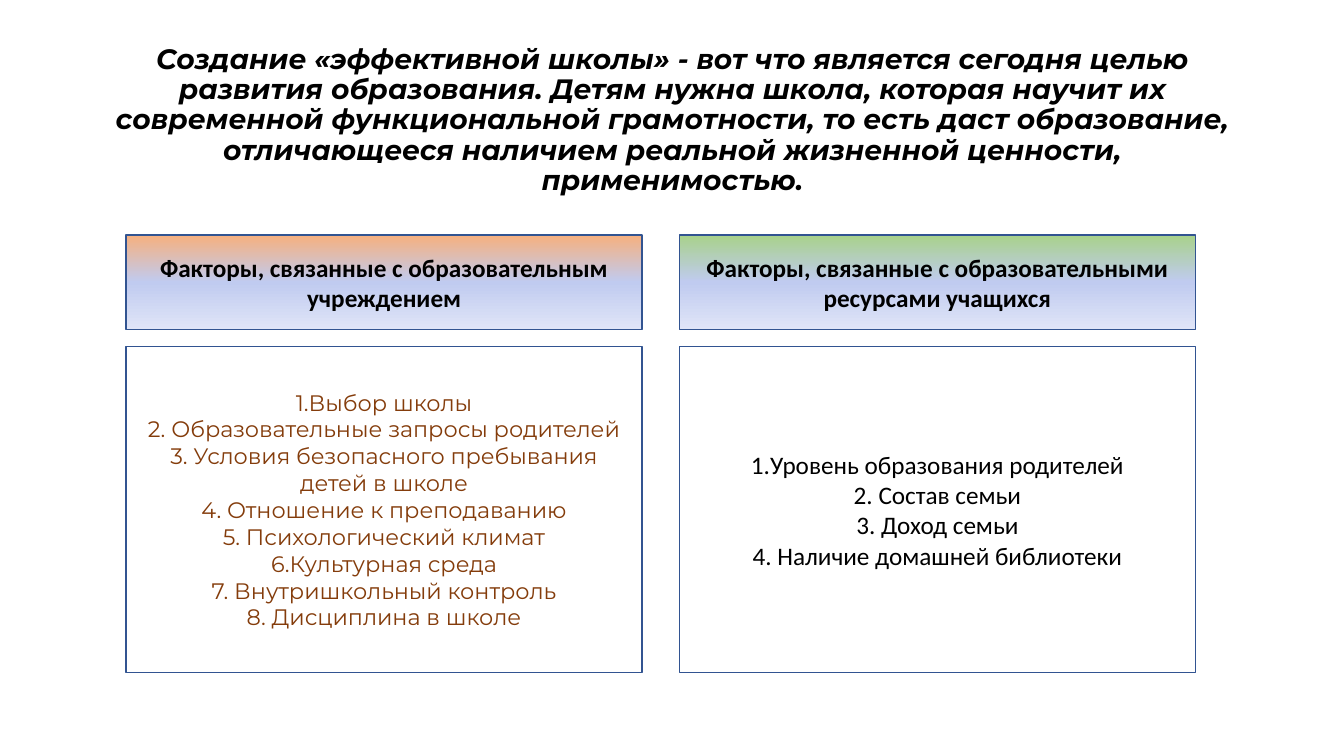
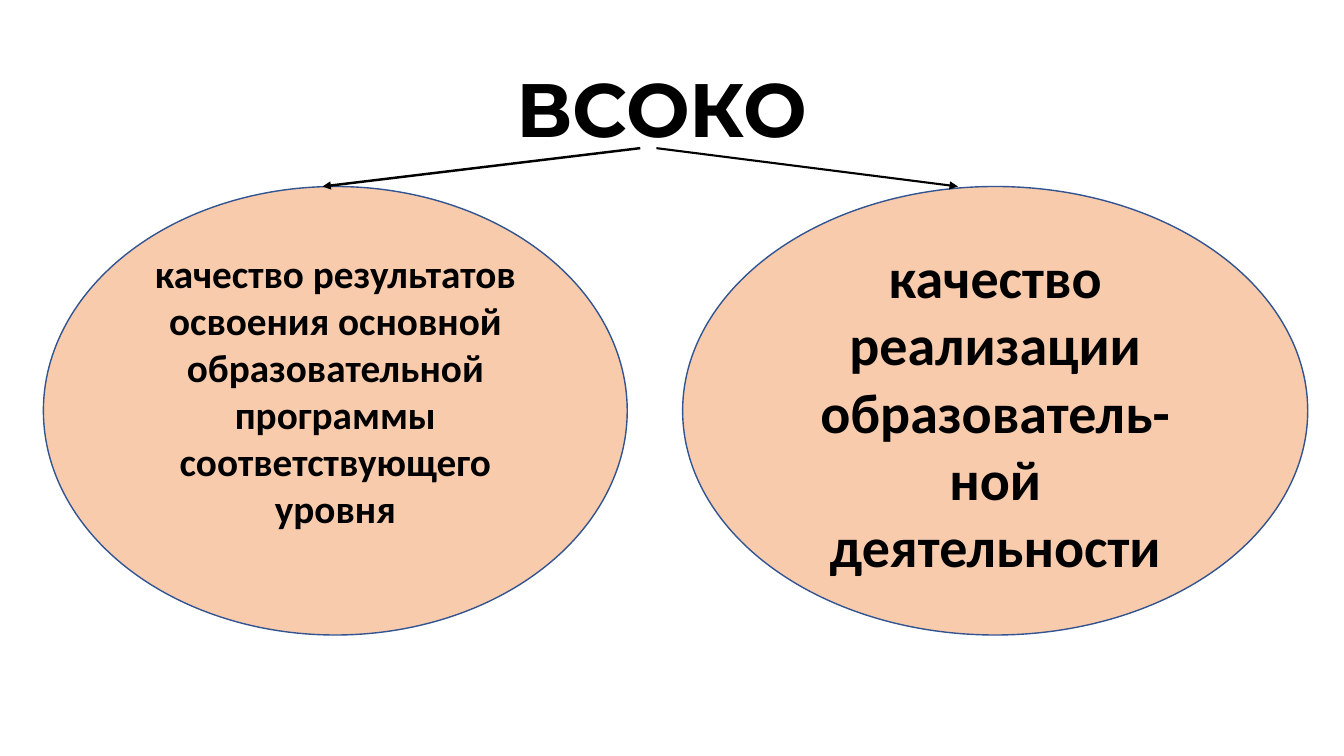
from copy import deepcopy

from lxml import etree
from pptx import Presentation
from pptx.dml.color import RGBColor
from pptx.enum.shapes import MSO_CONNECTOR, MSO_SHAPE
from pptx.enum.text import MSO_ANCHOR, PP_ALIGN
from pptx.oxml.ns import qn
from pptx.util import Inches, Pt

RECT, OVAL = MSO_SHAPE.RECTANGLE, MSO_SHAPE.OVAL
LINE = MSO_CONNECTOR.STRAIGHT
TOP, MIDDLE = MSO_ANCHOR.TOP, MSO_ANCHOR.MIDDLE
CENTER = PP_ALIGN.CENTER

WIDE, HIGH = Inches(13.33), Inches(7.5)
HEAD, BODY = "Montserrat", "Calibri"
COLORS = {
    "text": "000000", "brown": "843C0B", "edge": "325491",
    "peach": "F8CBAD", "orange": "F4B183", "green": "A9D18E",
    "blue": "C0CBF0", "pale": "E0E5F7",
}

# Shares of the slide, in percent
COLS, COL_W = (9.38, 50.55), 38.4
BAND_Y, BAND_H = 31.07, 12.53
LIST_Y, LIST_H = 45.87, 43.07
OVAL_Y, OVAL_H = 24.67, 59.33
ARROW_Y = 19.6

FACTORS = [
    ("Факторы, связанные с образовательным учреждением", "orange",
     ["1.Выбор школы",
      "2. Образовательные запросы родителей",
      "3. Условия безопасного пребывания детей в школе",
      "4. Отношение к преподаванию",
      "5. Психологический климат",
      "6.Культурная среда",
      "7. Внутришкольный контроль",
      "8. Дисциплина в школе"],
     dict(size=16, face=HEAD, color="brown")),
    ("Факторы, связанные с образовательными ресурсами учащихся", "green",
     ["1.Уровень образования родителей",
      "2. Состав семьи",
      "3. Доход семьи",
      "4. Наличие домашней библиотеки"],
     dict(size=18)),
]


def rgb(name):
    return RGBColor.from_string(COLORS[name])


def place(x, y, *size):
    """Turn percent shares into lengths, across and down in turn."""
    return [int(part * side / 100)
            for part, side in zip((x, y, *size), (WIDE, HIGH) * 2)]


def write(shape, text, size, face=BODY, color="text", bold=False,
          italic=False, anchor=MIDDLE, pitch=None):
    frame = shape.text_frame
    frame.word_wrap = True
    frame.vertical_anchor = anchor
    frame.text = text
    for para in frame.paragraphs:
        para.alignment = CENTER
        para.line_spacing = pitch
        for run in para.runs:
            font = run.font
            font.name, font.size = face, Pt(size)
            font.bold, font.italic = bold, italic
            font.color.rgb = rgb(color)


def title(slide, text, height, size, **style):
    box = slide.shapes.add_textbox(*place(6.9, 5.33, 86.27, height))
    write(box, text, size, face=HEAD, bold=True, pitch=0.9, **style)


def block(slide, kind, area, fill=None):
    """Add an outlined shape; fill is a colour name or None."""
    shape = slide.shapes.add_shape(kind, *place(*area))
    shape.shadow.inherit = False
    shape.line.color.rgb = rgb("edge")
    shape.line.width = Pt(1)
    if fill:
        shape.fill.solid()
        shape.fill.fore_color.rgb = rgb(fill)
    else:
        shape.fill.background()
    return shape


def blend(shape, color):
    """Fade from the given colour at the top to pale blue."""
    fill = shape.fill
    fill.gradient()
    fill.gradient_angle = 270
    stops = next(shape.element.iter(qn("a:gsLst")))
    stops.append(deepcopy(stops[-1]))
    marks = ((0.02, color), (0.5, "blue"), (1, "pale"))
    for stop, (spot, name) in zip(fill.gradient_stops, marks):
        stop.position = spot
        stop.color.rgb = rgb(name)


def arrow(slide, start, end, width):
    line = slide.shapes.add_connector(LINE, *place(*start), *place(*end))
    line.line.color.rgb = rgb("text")
    line.line.width = Pt(width)
    etree.SubElement(line.line._get_or_add_ln(), qn("a:tailEnd"),
                     type="triangle")
    etree.SubElement(line.element.spPr, qn("a:effectLst"))


def factors(slide):
    title(slide, "Создание «эффективной школы» - вот что является сегодня "
          "целью развития образования. Детям нужна школа, которая научит их "
          "современной функциональной грамотности, то есть даст образование, "
          "отличающееся наличием реальной жизненной ценности, "
          "применимостью.", 24.67, 20, italic=True, anchor=TOP)
    for x, (name, color, items, style) in zip(COLS, FACTORS):
        band = block(slide, RECT, (x, BAND_Y, COL_W, BAND_H))
        blend(band, color)
        write(band, name, 18, bold=True)
        write(block(slide, RECT, (x, LIST_Y, COL_W, LIST_H)),
              "\n".join(items), **style)


def quality(slide):
    title(slide, "ВСОКО ", 19.33, 54)
    left = block(slide, OVAL, (3.23, OVAL_Y, 43.44, OVAL_H), "peach")
    write(left, "качество результатов освоения основной образовательной "
          "программы соответствующего уровня", 28, bold=True)
    left.text_frame.margin_bottom = Inches(0.45)
    right = block(slide, OVAL, (50.79, OVAL_Y, 46.51, OVAL_H), "peach")
    write(right, "качество реализации образователь-ной деятельности", 40,
          bold=True)
    arrow(slide, (47.64, ARROW_Y), (24, OVAL_Y), 1.75)
    arrow(slide, (48.84, ARROW_Y), (71.27, OVAL_Y), 1.5)


def main():
    deck = Presentation()
    deck.slide_width, deck.slide_height = WIDE, HIGH
    for draw in (factors, quality):
        draw(deck.slides.add_slide(deck.slide_layouts[6]))
    deck.save("out.pptx")


if __name__ == "__main__":
    main()
